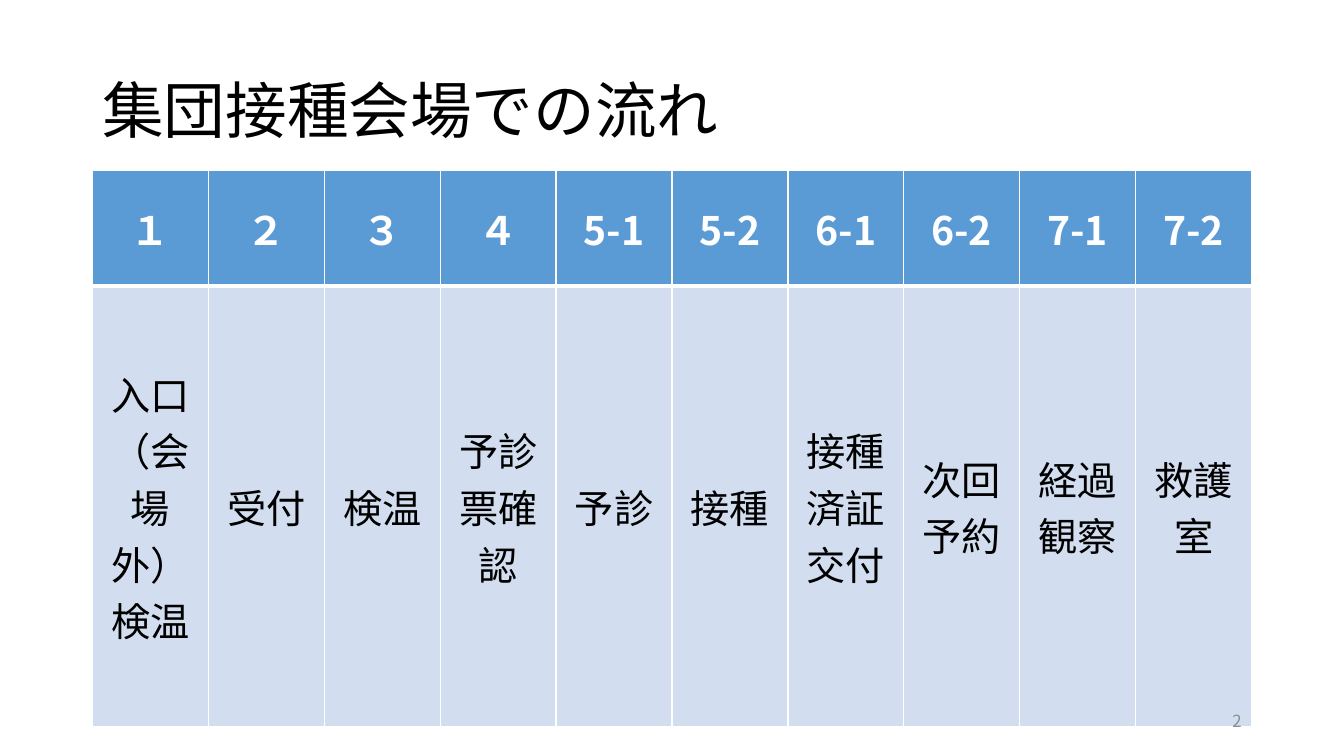
from dataclasses import dataclass

from lxml.etree import SubElement
from pptx import Presentation
from pptx.dml.color import RGBColor
from pptx.enum.text import MSO_ANCHOR as Anchor, PP_ALIGN as Align
from pptx.oxml.ns import qn
from pptx.util import Cm, Pt


@dataclass(frozen=True)
class Theme:
    font: str = "Noto Sans CJK JP"
    ink: str = "000000"
    paper: str = "FFFFFF"
    header_fill: str = "5B9BD5"
    body_fill: str = "D2DEEF"
    muted: str = "8C8C8C"
    title_size: int = 44
    table_size: int = 28
    number_size: int = 12
    thin_rule: int = 1
    thick_rule: int = 3


@dataclass(frozen=True)
class Step:
    number: str
    label: str


THEME = Theme()
LEFT, WIDTH = 2.33, 29.21
STEPS = [
    Step("１", "入口（会場外）検温"),
    Step("２", "受付"),
    Step("３", "検温"),
    Step("４", "予診票確認"),
    Step("5-1", "予診"),
    Step("5-2", "接種"),
    Step("6-1", "接種済証交付"),
    Step("6-2", "次回予約"),
    Step("7-1", "経過観察"),
    Step("7-2", "救護室"),
]


def write_text(frame, text: str, *, size: int, color: str, bold: bool = False,
               align=Align.LEFT, line_spacing: float = 1.0) -> None:
    para = frame.paragraphs[0]
    para.alignment = align
    para.line_spacing = line_spacing
    span = para.add_run()
    span.text = text
    span.font.size = Pt(size)
    span.font.bold = bold
    span.font.color.rgb = RGBColor.from_string(color)
    span.font.name = THEME.font
    SubElement(span.font._element, qn("a:ea"), typeface=THEME.font)


def add_text_box(page, left: float, top: float, width: float, height: float,
                 text: str, **text_format) -> None:
    box = page.shapes.add_textbox(Cm(left), Cm(top), Cm(width), Cm(height))
    frame = box.text_frame
    frame.word_wrap = True
    frame.vertical_anchor = Anchor.MIDDLE
    write_text(frame, text, **text_format)


def set_borders(cell, top: int, bottom: int) -> None:
    """Draw the cell's rules; call before filling, as the schema puts lines first."""
    properties = cell._tc.get_or_add_tcPr()
    widths = {"L": THEME.thin_rule, "R": THEME.thin_rule, "T": top, "B": bottom}
    for side, width in widths.items():
        line = SubElement(properties, qn(f"a:ln{side}"), w=str(Pt(width)))
        fill = SubElement(line, qn("a:solidFill"))
        SubElement(fill, qn("a:srgbClr"), val=THEME.paper)


def style_cell(cell, text: str, *, fill: str, color: str, bold: bool,
               top: int, bottom: int, vertical: bool) -> None:
    set_borders(cell, top, bottom)
    cell.fill.solid()
    cell.fill.fore_color.rgb = RGBColor.from_string(fill)
    cell.vertical_anchor = Anchor.MIDDLE
    if vertical:
        cell._tc.get_or_add_tcPr().set("vert", "eaVert")
    write_text(cell.text_frame, text, size=THEME.table_size, color=color,
               bold=bold, align=Align.CENTER)


def add_step_table(page, steps: list[Step]) -> None:
    header_height, body_height = 2.92, 11.1
    table = page.shapes.add_table(
        2, len(steps), Cm(LEFT), Cm(4.29), Cm(WIDTH),
        Cm(header_height + body_height)).table
    table.rows[0].height = Cm(header_height)
    table.rows[1].height = Cm(body_height)
    for index, step in enumerate(steps):
        table.columns[index].width = Cm(WIDTH / len(steps))
        style_cell(table.cell(0, index), step.number, fill=THEME.header_fill,
                   color=THEME.paper, bold=True, top=THEME.thin_rule,
                   bottom=THEME.thick_rule, vertical="-" not in step.number)
        style_cell(table.cell(1, index), step.label, fill=THEME.body_fill,
                   color=THEME.ink, bold=False, top=THEME.thick_rule,
                   bottom=THEME.thin_rule, vertical=True)


def main() -> None:
    deck = Presentation()
    deck.slide_width, deck.slide_height = Cm(33.87), Cm(19.05)
    page = deck.slides.add_slide(deck.slide_layouts[6])
    add_text_box(page, LEFT, 1.02, WIDTH, 3.68, "集団接種会場での流れ",
                 size=THEME.title_size, color=THEME.ink, line_spacing=0.9)
    add_step_table(page, STEPS)
    add_text_box(page, 23.92, 17.65, 7.62, 1.02, "2", size=THEME.number_size,
                 color=THEME.muted, align=Align.RIGHT)
    deck.save("out.pptx")


if __name__ == "__main__":
    main()
